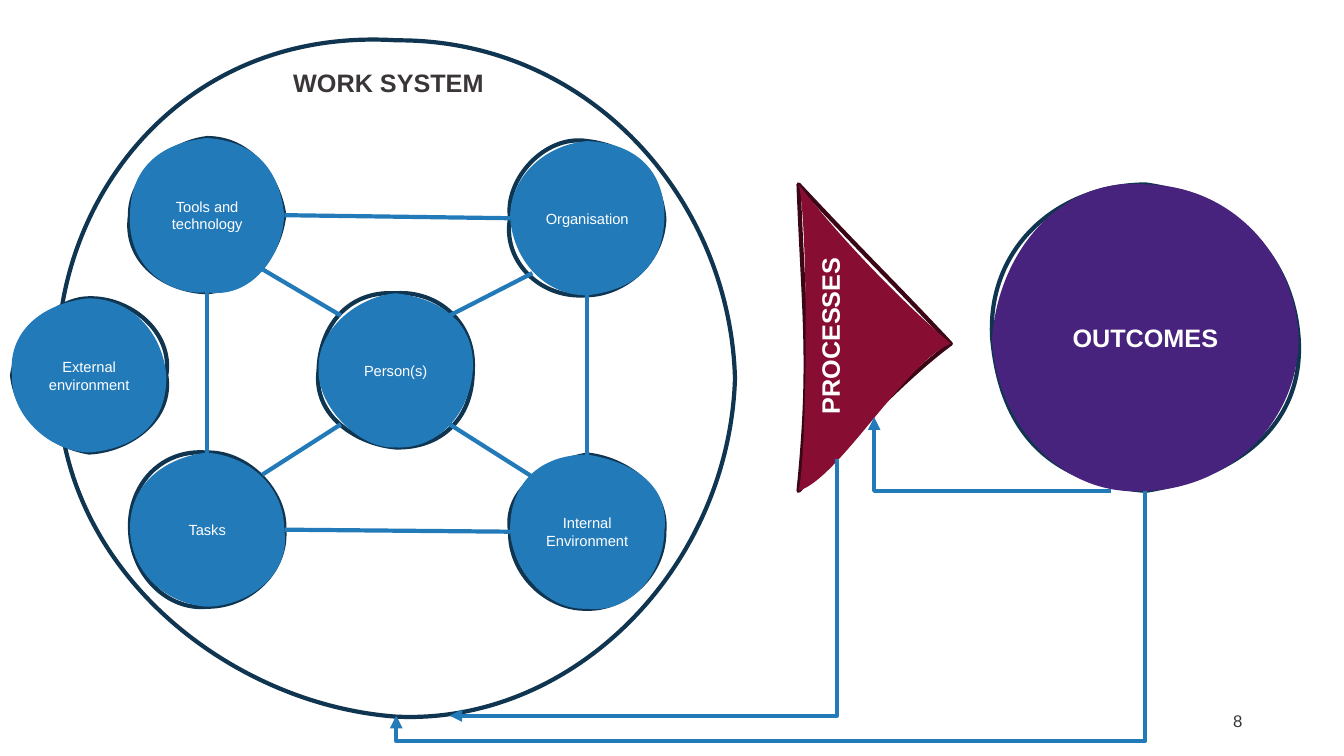
from lxml.etree import SubElement
from pptx import Presentation
from pptx.dml.color import RGBColor
from pptx.enum.shapes import MSO_CONNECTOR
from pptx.enum.text import MSO_ANCHOR, PP_ALIGN
from pptx.oxml.ns import qn
from pptx.util import Inches, Pt

NAVY = RGBColor(0x0F, 0x35, 0x51)
BLUE = RGBColor(0x22, 0x7A, 0xB9)
PURPLE = RGBColor(0x48, 0x23, 0x7D)
CRIMSON = RGBColor(0x87, 0x0D, 0x33)
MAROON = RGBColor(0x3B, 0x06, 0x16)
CHARCOAL = RGBColor(0x39, 0x35, 0x39)
WHITE = RGBColor(0xFF, 0xFF, 0xFF)

NODE_SIZE = 1.53
OUTER_CURVE = [(-.11, 1.68), (1.16, -.14), (5.27, -.01), (6.66, 1.58),
               (6.65, 5.22), (5.12, 6.79), (1.67, 6.59), (-.04, 5.21)]
OUTCOMES_CURVES = [
    [(-.05, .63), (.64, .01), (2.26, .1), (2.97, .59), (3.1, 2.39), (2.43, 2.9), (.54, 2.96), (.08, 2.43)],
    [(.07, .63), (.71, -.08), (2.37, .01), (3, .69), (3.04, 2.35), (2.36, 3.02), (.66, 3.11), (.02, 2.32)]]
PROCESSES_CURVES = [
    [(.74, .79), (.91, .94), (1.02, 1.94), (.38, 2.64), (.13, 1.76), (.05, 1.3)],
    [(.42, .54), (1, 1.14), (1.07, 1.75), (.4, 2.92), (.09, 2.67), (.1, .36)]]
WORK_NODES = {
    "Tools and technology": ((1.29, 1.37), [
        [(-.01, .41), (.36, .05), (1.21, 0), (1.48, .41), (1.48, 1.17), (1.22, 1.48), (.35, 1.52), (-.07, 1.23)],
        [(0, .27), (.34, .04), (1.22, .03), (1.48, .29), (1.51, 1.19), (1.19, 1.6), (.37, 1.57), (-.03, 1.26)]]),
    "Organisation": ((5.06, 1.4), [
        [(-.06, .39), (.34, -.07), (1.2, .05), (1.49, .33), (1.52, 1.2), (1.14, 1.52), (.27, 1.57), (-.08, 1.16)],
        [(-.01, .38), (.32, .04), (1.24, .02), (1.54, .29), (1.52, 1.25), (1.21, 1.48), (.39, 1.54), (.04, 1.23)]]),
    "Person(s)": ((3.16, 2.91), [
        [(.01, .33), (.29, -.03), (1.18, -.03), (1.56, .29), (1.53, 1.25), (1.21, 1.54), (.4, 1.5), (-.06, 1.23)],
        [(-.02, .35), (.4, .03), (1.23, .05), (1.56, .31), (1.5, 1.19), (1.19, 1.55), (.4, 1.55), (-.01, 1.12)]]),
    "Tasks": ((1.29, 4.49), [
        [(-.02, .32), (.31, -.04), (1.17, -.01), (1.55, .39), (1.56, 1.17), (1.2, 1.53), (.37, 1.57), (.01, 1.21)],
        [(-.01, .28), (.39, .04), (1.19, .04), (1.53, .34), (1.6, 1.21), (1.18, 1.52), (.34, 1.5), (.01, 1.18)]]),
    "Internal Environment": ((5.06, 4.51), [
        [(-.07, .34), (.37, .07), (1.15, .04), (1.57, .34), (1.53, 1.23), (1.11, 1.54), (.36, 1.54), (-.01, 1.18)],
        [(-.01, .29), (.29, 0), (1.2, .07), (1.59, .29), (1.52, 1.17), (1.21, 1.58), (.37, 1.55), (.03, 1.16)]]),
}
EXTERNAL_CURVES = [
    [(.05, .41), (.41, 0), (1.17, -.01), (1.6, .33), (1.6, 1.2), (1.17, 1.51), (.34, 1.46), (.04, 1.14)],
    [(-.05, .31), (.33, .04), (1.23, .01), (1.5, .39), (1.54, 1.23), (1.24, 1.49), (.36, 1.52), (-.02, 1.15)]]


def add_point(parent, point, tag="a:pt"):
    x, y = point
    SubElement(parent, qn(tag), x=str(Inches(x)), y=str(Inches(y)))


def write_text(shape, text, size, color, bold=False, align=None):
    frame = shape.text_frame
    frame.word_wrap = True
    paragraph = frame.paragraphs[0]
    paragraph.text = text
    paragraph.alignment = align
    font = paragraph.font
    font.name, font.size, font.bold = "Arial", Pt(size), bold
    font.color.rgb = color


def add_label(slide, box, text, size, color, bold=False, align=PP_ALIGN.LEFT, rotation=0):
    label = slide.shapes.add_textbox(*map(Inches, box))
    label.rotation = rotation
    label.text_frame.vertical_anchor = MSO_ANCHOR.MIDDLE
    write_text(label, text, size, color, bold, align)


def add_sketch(slide, origin, anchors, curves, line, fill=None):
    corners = [(Inches(x), Inches(y)) for x, y in anchors]
    builder = slide.shapes.build_freeform(*corners[0])
    builder.add_line_segments(corners[1:])
    shape = builder.convert_to_shape(*map(Inches, origin))
    shape.shadow.inherit = False
    shape.line.color.rgb = line
    shape.line.width = Pt(3)
    if fill is None:
        shape.fill.background()
    else:
        shape.fill.solid()
        shape.fill.fore_color.rgb = fill
    paths = next(shape.element.iter(qn("a:pathLst")))
    for path in list(paths):
        paths.remove(path)
    for index, controls in enumerate(curves):
        path = SubElement(paths, qn("a:path"), w=str(shape.width), h=str(shape.height))
        path.set(*(("stroke", "0") if index else ("fill", "none")))
        add_point(SubElement(path, qn("a:moveTo")), anchors[0])
        ends = anchors[1:] + anchors[:1]
        for first, second, end in zip(controls[::2], controls[1::2], ends):
            curve = SubElement(path, qn("a:cubicBezTo"))
            for point in (first, second, end):
                add_point(curve, point)
        SubElement(path, qn("a:close"))
    return shape


def add_circle(slide, origin, size, curves, line, fill=None, text=None, text_size=10.5, bold=False):
    half = size / 2
    anchors = [(0, half), (half, 0), (size, half), (half, size)]
    circle = add_sketch(slide, origin, anchors, curves, line, fill)
    sites = next(circle.element.iter(qn("a:cxnLst")))
    for index in (1, 0, 3, 2):
        add_point(SubElement(sites, qn("a:cxn"), ang="0"), anchors[index], "a:pos")
    if text:
        frame = circle.text_frame
        frame.margin_left = frame.margin_right = Inches(0.25)
        frame.vertical_anchor = MSO_ANCHOR.MIDDLE
        write_text(circle, text, text_size, WHITE, bold, PP_ALIGN.CENTER)
    return circle


def add_link(slide, start, end, kind=MSO_CONNECTOR.STRAIGHT):
    connector = slide.shapes.add_connector(kind, *map(Inches, start + end))
    connector.line.color.rgb = BLUE
    connector.line.width = Pt(3)
    SubElement(connector.element.spPr, qn("a:effectLst"))
    return connector


def add_feedback(slide, start, end, preset="bentConnector3", bend=None, turned=False):
    if turned:
        middle_x, middle_y = (start[0] + end[0]) / 2, (start[1] + end[1]) / 2
        half_width, half_height = abs(end[1] - start[1]) / 2, abs(end[0] - start[0]) / 2
        start = (middle_x - half_width, middle_y - half_height)
        end = (middle_x + half_width, middle_y + half_height)
    connector = add_link(slide, start, end, MSO_CONNECTOR.ELBOW)
    properties = connector.element.spPr
    if turned:
        properties.find(qn("a:xfrm")).set("rot", "5400000")
    geometry = properties.find(qn("a:prstGeom"))
    geometry.set("prst", preset)
    if bend is not None:
        SubElement(geometry.find(qn("a:avLst")), qn("a:gd"), name="adj1", fmla=f"val {bend}")
    SubElement(properties.find(qn("a:ln")), qn("a:tailEnd"), type="triangle")


def add_processes(slide, origin):
    anchors = [(0, 0), (1.51, 1.58), (0, 3.04)]
    add_sketch(slide, origin, anchors, PROCESSES_CURVES, MAROON, CRIMSON)


def add_work_nodes(slide):
    nodes = {name: add_circle(slide, origin, NODE_SIZE, curves, NAVY, BLUE, name)
             for name, (origin, curves) in WORK_NODES.items()}
    for start, end in [((4.46, 3.13), (5.28, 2.71)), ((4.46, 4.21), (5.28, 4.73)),
                       ((3.38, 4.21), (2.6, 4.71)), ((3.38, 3.13), (2.6, 2.67))]:
        add_link(slide, start, end)
    for first, first_site, second, second_site in [
            ("Organisation", 2, "Internal Environment", 0),
            ("Organisation", 1, "Tools and technology", 3),
            ("Tools and technology", 2, "Tasks", 0),
            ("Tasks", 3, "Internal Environment", 1)]:
        link = add_link(slide, (0, 0), (1, 1))
        link.begin_connect(nodes[first], first_site)
        link.end_connect(nodes[second], second_site)


def main():
    presentation = Presentation()
    presentation.slide_width = Inches(13.33)
    presentation.slide_height = Inches(7.5)
    slide = presentation.slides.add_slide(presentation.slide_layouts[6])
    add_label(slide, (9.42, 6.95, 3, 0.4), "8", 12, CHARCOAL, align=PP_ALIGN.RIGHT)
    add_circle(slide, (0.58, 0.4), 6.71, [OUTER_CURVE], NAVY)
    add_circle(slide, (9.84, 1.83), 3.04, OUTCOMES_CURVES, NAVY, PURPLE, "OUTCOMES", 18, True)
    add_processes(slide, (7.92, 1.83))
    add_work_nodes(slide)
    add_circle(slide, (0.12, 2.96), NODE_SIZE, EXTERNAL_CURVES, NAVY, BLUE, "External environment")
    add_label(slide, (7.12, 2.9, 2.22, 0.4), "PROCESSES", 18, WHITE, True, rotation=270)
    add_feedback(slide, (11.02, 4.87), (8.67, 4.14), "bentConnector2")
    add_feedback(slide, (11.36, 4.87), (3.93, 7.1), bend=111200, turned=True)
    add_feedback(slide, (8.28, 4.57), (4.46, 7.1), bend=-500)
    add_label(slide, (2.81, 0.62, 2.22, 0.4), "WORK SYSTEM", 18, CHARCOAL, True)
    presentation.save("out.pptx")


if __name__ == "__main__":
    main()
